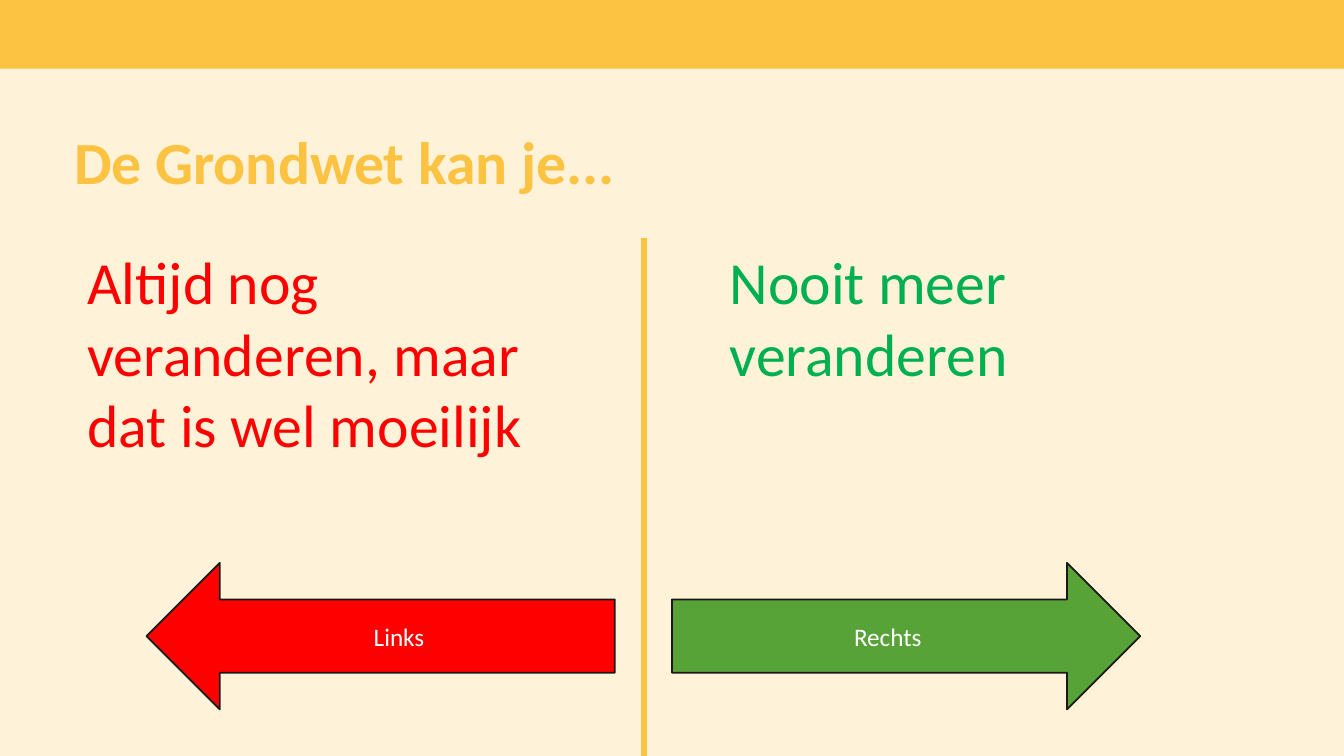
from pptx import Presentation
from pptx.dml.color import RGBColor
from pptx.enum.shapes import MSO_CONNECTOR, MSO_SHAPE
from pptx.enum.text import MSO_ANCHOR, MSO_AUTO_SIZE, PP_ALIGN
from pptx.oxml.ns import qn
from pptx.util import Cm, Pt
from lxml.etree import SubElement

CREAM = RGBColor(0xFE, 0xF3, 0xD9)
YELLOW = RGBColor(0xFC, 0xC2, 0x41)
RED = RGBColor(0xFF, 0x00, 0x00)
TEXT_GREEN = RGBColor(0x00, 0xB0, 0x50)
ARROW_GREEN = RGBColor(0x58, 0xA3, 0x37)
BLACK = RGBColor(0x1A, 0x19, 0x18)
WHITE = RGBColor(0xFF, 0xFF, 0xFF)

FONT = "Calibri"
WIDTH, HEIGHT = 25.4, 14.29
COLUMN_TOP = 4.5


def set_font(p, size, color, bold=False):
    p.font.name = FONT
    p.font.size = Pt(size)
    p.font.bold = bold
    p.font.color.rgb = color


def add_band(s, x, y, w, h):
    sp = s.shapes.add_shape(MSO_SHAPE.RECTANGLE, Cm(x), Cm(y), Cm(w), Cm(h))
    sp.shadow.inherit = False
    sp.fill.solid()
    sp.fill.fore_color.rgb = YELLOW
    sp.line.fill.background()


def add_title(s, x, y, w, h, text):
    sp = s.shapes.title
    sp.left, sp.top, sp.width, sp.height = Cm(x), Cm(y), Cm(w), Cm(h)
    tf = sp.text_frame
    tf.text = text
    tf.word_wrap = True
    tf.auto_size = MSO_AUTO_SIZE.NONE
    tf.vertical_anchor = MSO_ANCHOR.TOP
    tf.margin_left = tf.margin_right = tf.margin_bottom = 0
    tf.margin_top = Cm(0.13)
    p = tf.paragraphs[0]
    p.alignment = PP_ALIGN.LEFT
    p.line_spacing = Pt(36)
    set_font(p, 32, YELLOW, bold=True)


def add_divider(s, x, top, bottom):
    line = s.shapes.add_connector(MSO_CONNECTOR.STRAIGHT, Cm(x), Cm(top), Cm(x), Cm(bottom))
    line.line.color.rgb = YELLOW
    line.line.width = Pt(3)
    SubElement(line._element.spPr, qn("a:effectLst"))


def add_answer(s, x, y, w, h, text, color):
    tf = s.shapes.add_textbox(Cm(x), Cm(y), Cm(w), Cm(h)).text_frame
    tf.word_wrap = True
    tf.auto_size = MSO_AUTO_SIZE.SHAPE_TO_FIT_TEXT
    tf.text = text
    set_font(tf.paragraphs[0], 32, color)


def add_arrow(s, x, y, w, h, kind, text, color):
    sp = s.shapes.add_shape(kind, Cm(x), Cm(y), Cm(w), Cm(h))
    sp.shadow.inherit = False
    sp.fill.solid()
    sp.fill.fore_color.rgb = color
    sp.line.color.rgb = BLACK
    sp.line.width = Pt(1)
    tf = sp.text_frame
    tf.text = text
    tf.vertical_anchor = MSO_ANCHOR.MIDDLE
    p = tf.paragraphs[0]
    p.alignment = PP_ALIGN.CENTER
    set_font(p, 13.5, WHITE)


def main():
    prs = Presentation()
    prs.slide_width, prs.slide_height = Cm(WIDTH), Cm(HEIGHT)
    s = prs.slides.add_slide(prs.slide_layouts[5])
    s.background.fill.solid()
    s.background.fill.fore_color.rgb = CREAM

    add_band(s, 0, 0, WIDTH, 1.3)
    add_title(s, 1.4, 2.31, 18.19, 2.49, "De Grondwet kan je...")
    add_divider(s, 12.17, COLUMN_TOP, HEIGHT)
    add_answer(s, 1.4, COLUMN_TOP, 9.09, 4.37,
               "Altijd nog veranderen, maar dat is wel moeilijk", RED)
    add_answer(s, 13.54, COLUMN_TOP, 9.75, 3, "Nooit meer veranderen", TEXT_GREEN)
    for x, kind, text, color in (
        (12.7, MSO_SHAPE.RIGHT_ARROW, "Rechts", ARROW_GREEN),
        (2.77, MSO_SHAPE.LEFT_ARROW, "Links", RED),
    ):
        add_arrow(s, x, 10.64, 8.85, 2.77, kind, text, color)

    prs.save("out.pptx")


if __name__ == "__main__":
    main()
